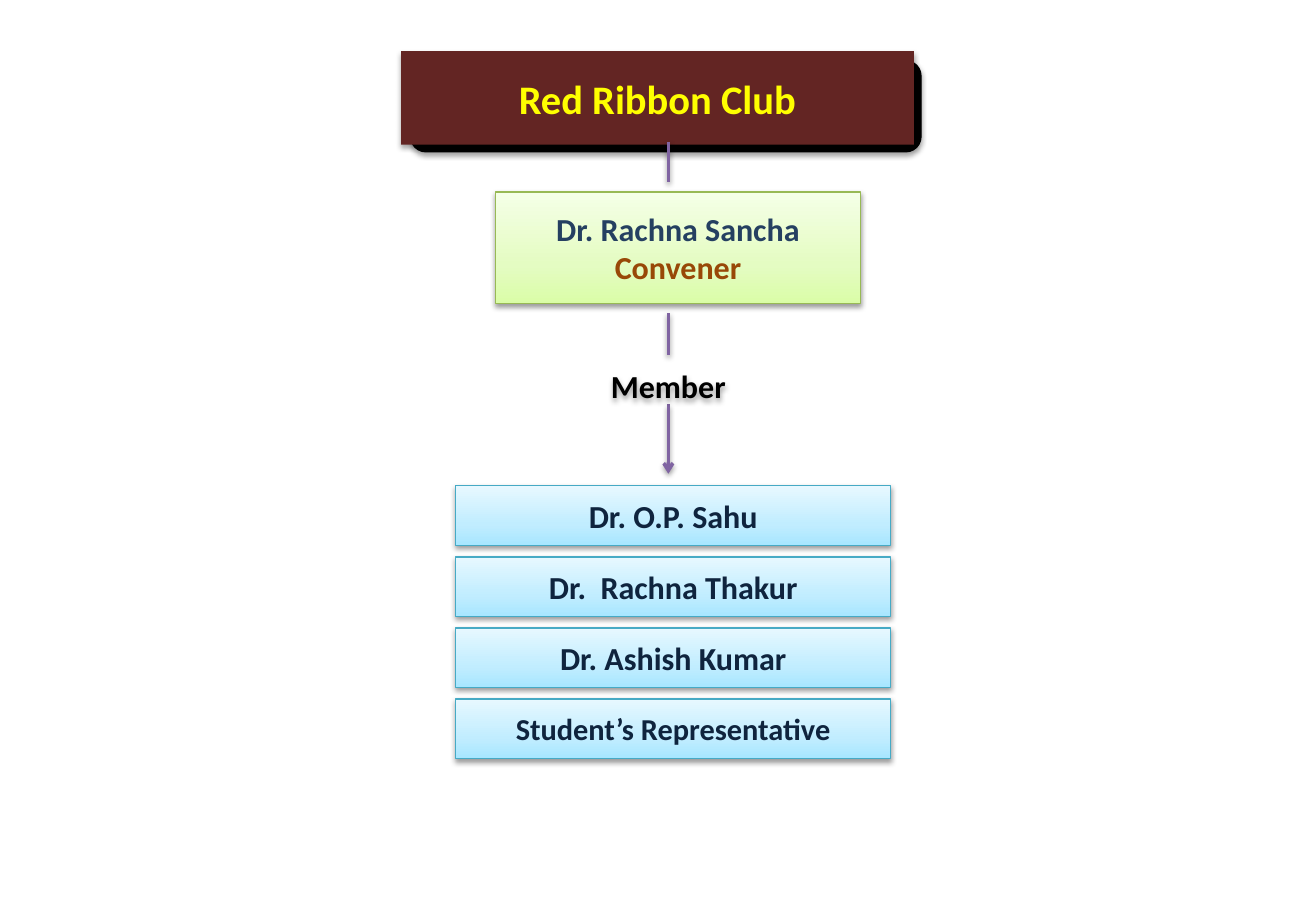
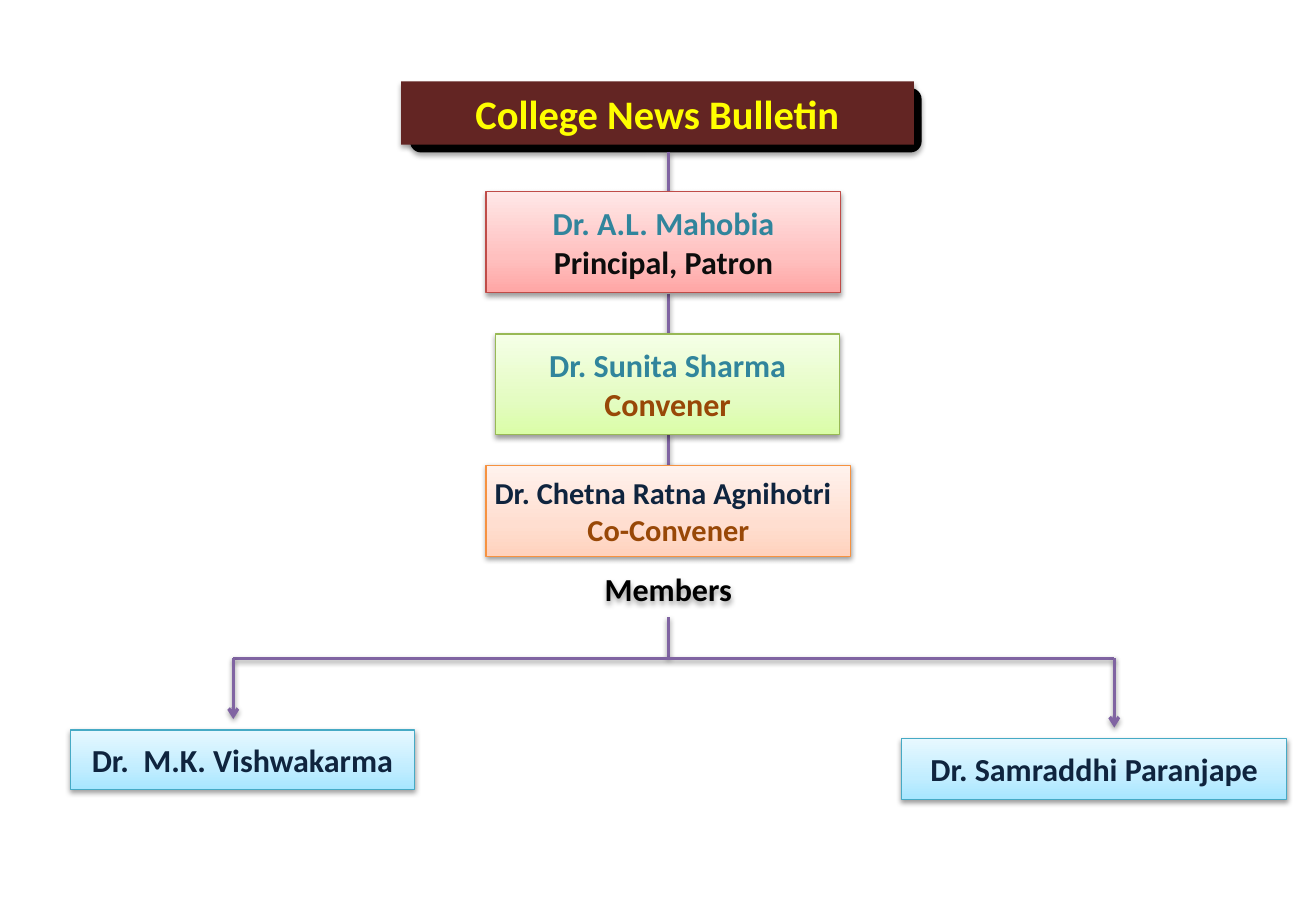
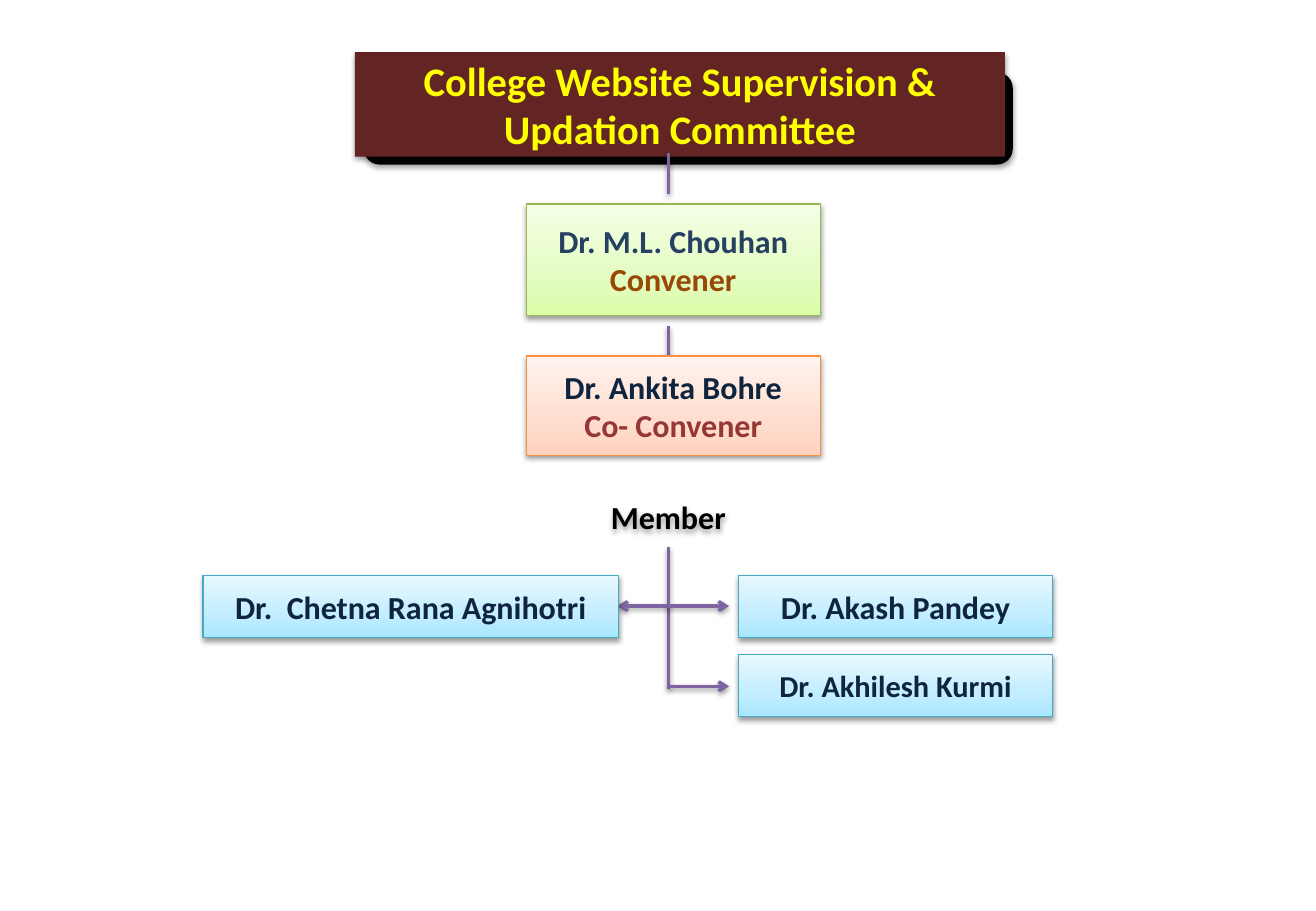
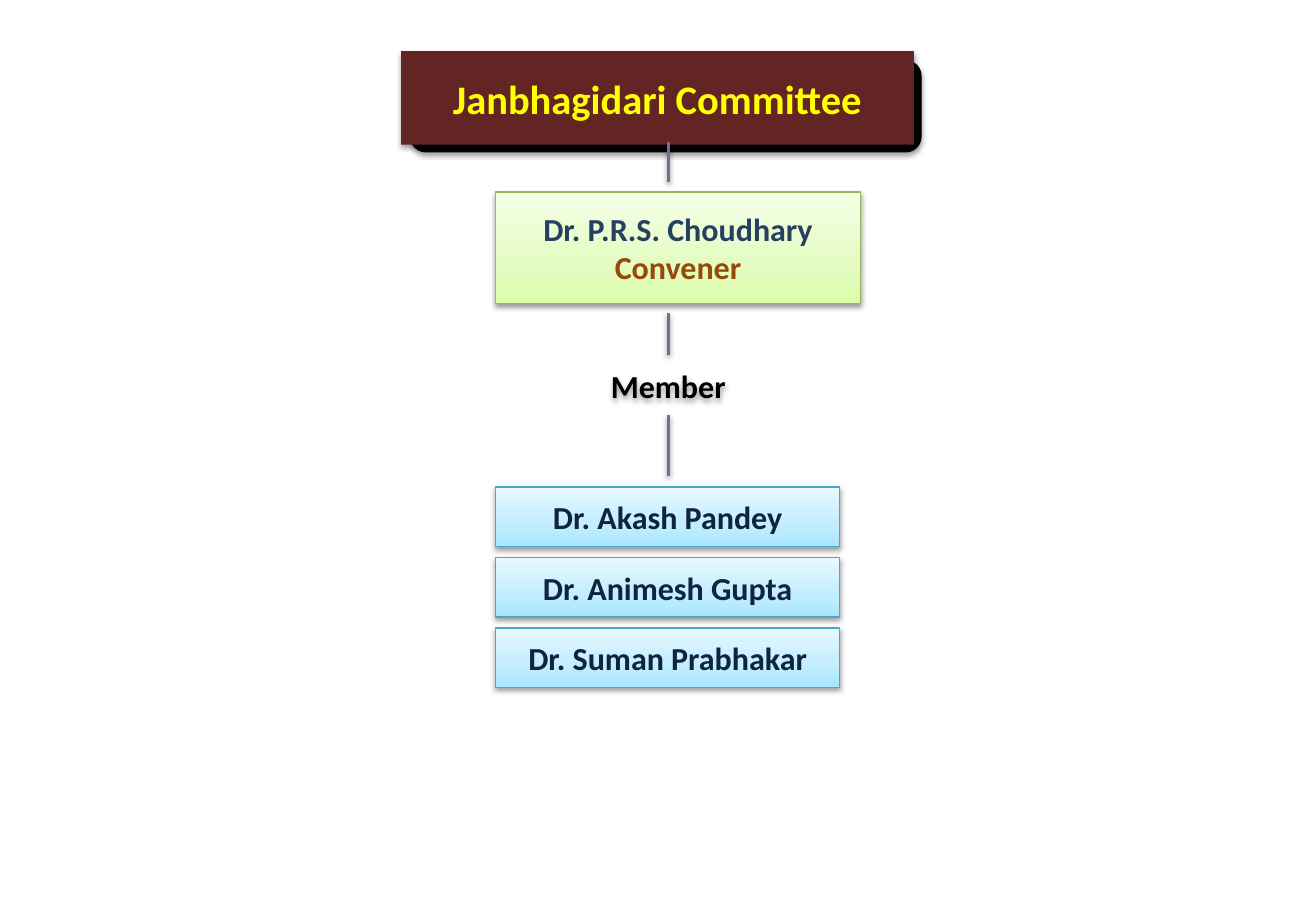
from copy import deepcopy
from dataclasses import dataclass

from lxml.etree import SubElement
from pptx import Presentation
from pptx.dml.color import RGBColor
from pptx.enum.shapes import MSO_CONNECTOR, MSO_SHAPE
from pptx.enum.text import MSO_ANCHOR, MSO_AUTO_SIZE, PP_ALIGN
from pptx.oxml.ns import qn
from pptx.util import Inches, Pt


@dataclass(frozen=True)
class Theme:
    font = "Calibri"
    title_size = 24
    text_size = 19
    small_size = 18
    border_width = 0.75
    link_width = 2
    black = "000000"
    maroon = "632523"
    yellow = "FFFF00"
    purple = "8064A2"
    navy = "0F243E"
    blue = "254061"
    teal = "31859C"
    brown = "984807"
    red = "953735"
    charcoal = "0D0D0D"
    green_card = ("DAFDA7", "E4FCC2", "F5FFE7", "98B955")
    pink_card = ("FFA6A5", "FFC0BF", "FFE7E7", "BF4C48")
    orange_card = ("FFD2BD", "FFDED0", "FFF2ED", "F69240")
    blue_card = ("A7E6FF", "C1EDFF", "E7F8FF", "46AAC5")
    stops = (0, 0.35, 1)


theme = Theme()


def add_shadow(shape, opacity=38, distance=1.57):
    effects = SubElement(shape.element.spPr, qn("a:effectLst"))
    shadow = SubElement(effects, qn("a:outerShdw"), blurRad=str(Pt(3.15)),
                        dist=str(Pt(distance)), dir="5400000", rotWithShape="0")
    color = SubElement(shadow, qn("a:srgbClr"), val=theme.black)
    SubElement(color, qn("a:alpha"), val=str(opacity * 1000))


def write_lines(shape, lines, size, align=PP_ALIGN.CENTER):
    frame = shape.text_frame
    frame.word_wrap = True
    frame.auto_size = MSO_AUTO_SIZE.NONE
    frame.vertical_anchor = MSO_ANCHOR.MIDDLE
    frame.margin_left = frame.margin_right = Inches(0.07)
    frame.margin_top = frame.margin_bottom = Inches(0.04)
    for index, (text, color) in enumerate(lines):
        para = frame.add_paragraph() if index else frame.paragraphs[0]
        para.text = text
        para.alignment = PP_ALIGN.CENTER if index else align
        para.font.name = theme.font
        para.font.size = Pt(size)
        para.font.bold = True
        para.font.color.rgb = RGBColor.from_string(color)


axis = 5.5
tall_plate, tall_bar = (3.38, 0.5, 4.2, 0.75), (3.3, 0.42, 4.22, 0.77)
convener_place = (4.08, 1.58, 3, 0.92)
link_to_convener = (axis, 1.17, axis, 1.5, False)
link_to_label = (axis, 2.58, axis, 2.92, False)

slides = [
    {
        "title": "Red Ribbon Club",
        "plate": tall_plate,
        "bar": tall_bar,
        "label": ("Member", 2.93),
        "officers": [
            (theme.green_card, convener_place, theme.text_size, PP_ALIGN.CENTER,
             [("Dr. Rachna Sancha", theme.blue), ("Convener", theme.brown)]),
        ],
        "members": [
            (name, (3.75, 4 + row * 0.585, 3.58, 0.49), size)
            for row, (name, size) in enumerate([
                ("Dr. O.P. Sahu", theme.text_size),
                ("Dr.  Rachna Thakur", theme.text_size),
                ("Dr. Ashish Kumar", theme.text_size),
                ("Student’s Representative", theme.small_size),
            ])
        ],
        "links": [link_to_convener, link_to_label, (axis, 3.33, axis, 3.9, True)],
    },
    {
        "title": "College News Bulletin",
        "plate": (3.38, 0.73, 4.2, 0.52),
        "bar": (3.3, 0.67, 4.22, 0.52),
        "label": ("Members", 4.6),
        "officers": [
            (theme.pink_card, (4, 1.58, 2.92, 0.83), theme.text_size, PP_ALIGN.CENTER,
             [("Dr. A.L. Mahobia", theme.teal), ("Principal, Patron", theme.charcoal)]),
            (theme.green_card, (4.08, 2.75, 2.83, 0.83), theme.text_size, PP_ALIGN.CENTER,
             [("Dr. Sunita Sharma", theme.teal), ("Convener", theme.brown)]),
            (theme.orange_card, (4, 3.83, 3, 0.75), theme.small_size, PP_ALIGN.LEFT,
             [("Dr. Chetna Ratna Agnihotri", theme.navy), ("Co-Convener", theme.brown)]),
        ],
        "members": [
            ("Dr.  M.K. Vishwakarma", (0.58, 6.01, 2.83, 0.49), theme.text_size),
            ("Dr. Samraddhi Paranjape", (7.42, 6.08, 3.17, 0.5), theme.text_size),
        ],
        "links": [
            (axis, 1.25, axis, 1.58, False),
            (axis, 2.42, axis, 2.75, False),
            (axis, 3.58, axis, 3.92, False),
            (axis, 5.08, axis, 5.42, False),
            (1.92, 5.42, 9.17, 5.42, False),
            (1.92, 5.42, 1.92, 5.92, True),
            (9.17, 5.42, 9.17, 5.99, True),
        ],
    },
    {
        "title": "College Website Supervision & Updation Committee",
        "plate": (3, 0.6, 5.33, 0.75),
        "bar": (2.92, 0.43, 5.35, 0.86),
        "label": ("Member", 4.01),
        "officers": [
            (theme.green_card, (4.33, 1.68, 2.42, 0.92), theme.text_size, PP_ALIGN.CENTER,
             [("Dr. M.L. Chouhan", theme.blue), ("Convener", theme.brown)]),
            (theme.orange_card, (4.33, 2.93, 2.42, 0.82), theme.text_size, PP_ALIGN.CENTER,
             [("Dr. Ankita Bohre", theme.navy), ("Co- Convener", theme.red)]),
        ],
        "members": [
            ("Dr.  Chetna Rana Agnihotri", (1.67, 4.74, 3.42, 0.51), theme.text_size),
            ("Dr. Akash Pandey", (6.08, 4.74, 2.58, 0.51), theme.text_size),
            ("Dr. Akhilesh Kurmi", (6.08, 5.39, 2.58, 0.51), theme.small_size),
        ],
        "links": [
            (axis, 1.26, axis, 1.6, False),
            (axis, 2.68, axis, 3.01, False),
            (axis, 4.5, axis, 5.67, False),
            (axis, 4.99, 5.08, 4.99, True),
            (axis, 4.99, 6, 4.99, True),
            (axis, 5.65, 6, 5.65, True),
        ],
    },
    {
        "title": "Janbhagidari Committee",
        "plate": tall_plate,
        "bar": tall_bar,
        "label": ("Member", 2.93),
        "officers": [
            (theme.green_card, convener_place, theme.text_size, PP_ALIGN.CENTER,
             [("Dr. P.R.S. Choudhary", theme.blue), ("Convener", theme.brown)]),
        ],
        "members": [
            (name, (4.08, 4.01 + row * 0.58, 2.83, 0.49), theme.text_size)
            for row, name in enumerate(
                ["Dr. Akash Pandey", "Dr. Animesh Gupta", "Dr. Suman Prabhakar"])
        ],
        "links": [link_to_convener, link_to_label, (axis, 3.42, axis, 3.92, False)],
    },
]

deck = Presentation()
deck.slide_width = Inches(10.83)
deck.slide_height = Inches(7.5)
title_only = deck.slide_layouts[5]

for content in slides:
    page = deck.slides.add_slide(title_only)

    title = page.shapes.title
    title.left, title.top, title.width, title.height = map(Inches, content["bar"])
    outline = SubElement(title.element.spPr, qn("a:prstGeom"), prst="roundRect")
    SubElement(outline, qn("a:avLst"))
    title.fill.solid()
    title.fill.fore_color.rgb = RGBColor.from_string(theme.maroon)
    title.line.fill.background()
    write_lines(title, [(content["title"], theme.yellow)], theme.title_size)
    add_shadow(title, 35, 1.81)

    plate = page.shapes.add_shape(MSO_SHAPE.ROUNDED_RECTANGLE, *map(Inches, content["plate"]))
    plate.fill.solid()
    plate.fill.fore_color.rgb = RGBColor.from_string(theme.black)
    plate.line.color.rgb = RGBColor.from_string(theme.black)
    plate.line.width = Pt(theme.border_width)
    add_shadow(plate, 35, 1.81)
    title.element.addprevious(plate.element)

    for start_x, start_y, end_x, end_y, has_arrow in content["links"]:
        link = page.shapes.add_connector(
            MSO_CONNECTOR.STRAIGHT, *map(Inches, (start_x, start_y, end_x, end_y)))
        link.line.color.rgb = RGBColor.from_string(theme.purple)
        link.line.width = Pt(theme.link_width)
        if has_arrow:
            SubElement(link.element.spPr.find(qn("a:ln")), qn("a:tailEnd"), type="arrow")
        add_shadow(link)

    member_cards = [
        (theme.blue_card, place, size, PP_ALIGN.CENTER, [(name, theme.navy)])
        for name, place, size in content["members"]
    ]
    for palette, place, size, align, lines in content["officers"] + member_cards:
        *shades, border = palette
        card = page.shapes.add_shape(MSO_SHAPE.RECTANGLE, *map(Inches, place))
        card.fill.gradient()
        card.fill.gradient_angle = 90
        first_stop = card.element.spPr.find(".//" + qn("a:gs"))
        first_stop.addnext(deepcopy(first_stop))
        for stop, position, shade in zip(card.fill.gradient_stops, theme.stops, shades):
            stop.position = position
            stop.color.rgb = RGBColor.from_string(shade)
        card.line.color.rgb = RGBColor.from_string(border)
        card.line.width = Pt(theme.border_width)
        write_lines(card, lines, size, align)
        add_shadow(card)

    label_text, label_top = content["label"]
    label = page.shapes.add_textbox(*map(Inches, (4.25, label_top, 2.5, 0.49)))
    write_lines(label, [(label_text, theme.black)], theme.text_size)
    add_shadow(label)

deck.save("out.pptx")
